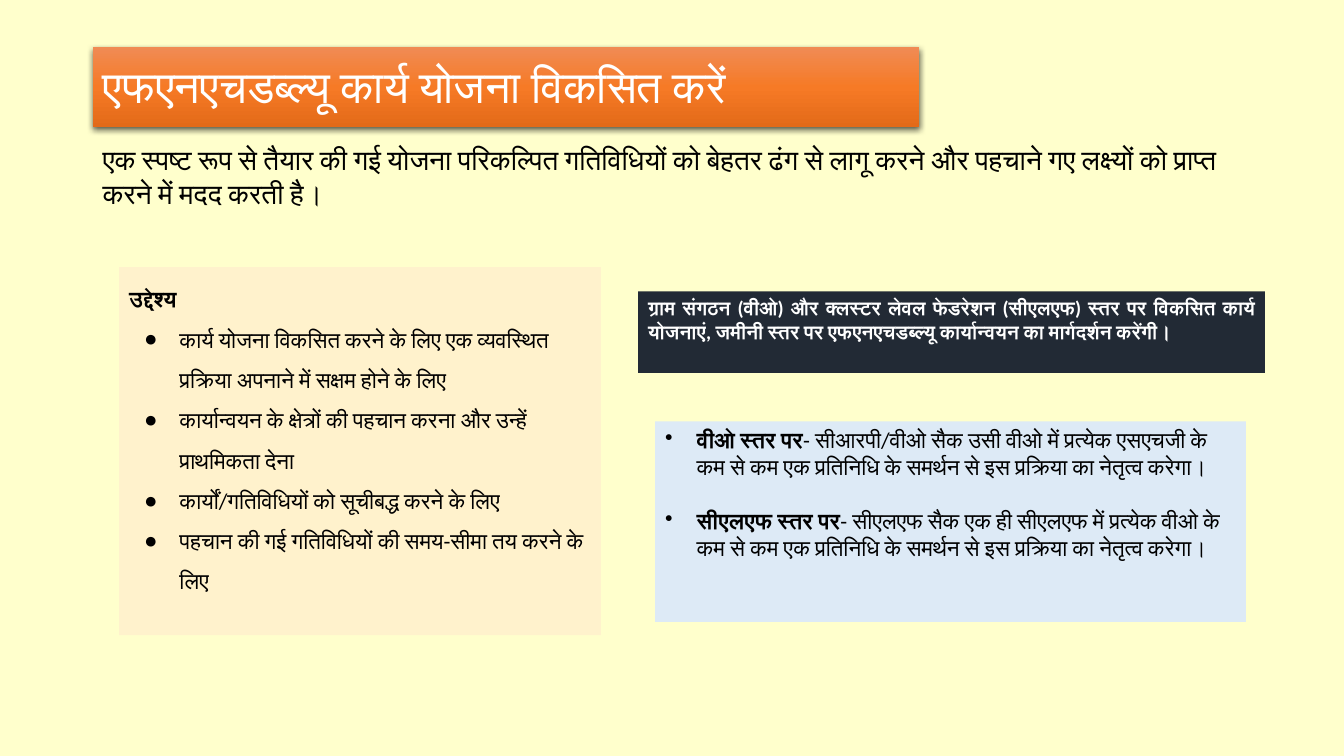
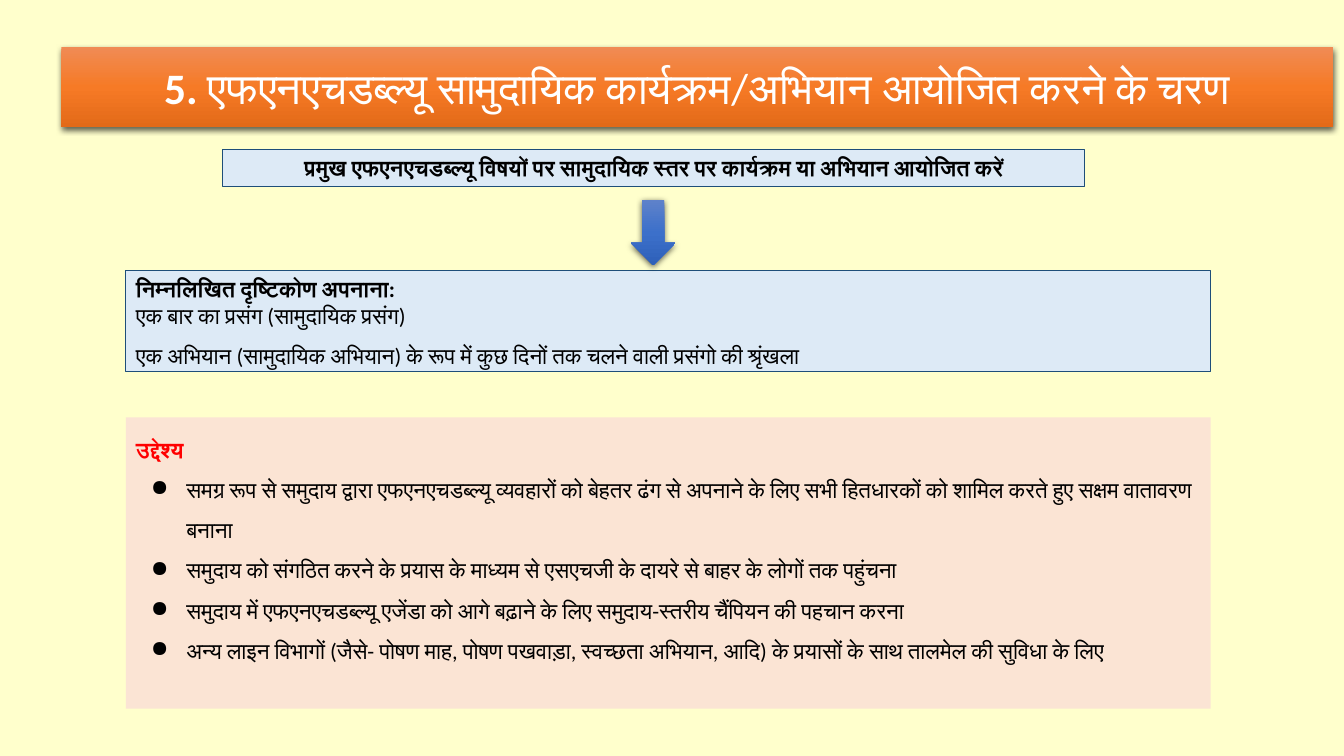
"""Build two slides on planning and running community health events."""
from copy import deepcopy

from lxml import etree
from pptx import Presentation
from pptx.dml.color import RGBColor
from pptx.enum.shapes import MSO_SHAPE
from pptx.enum.text import MSO_ANCHOR, MSO_AUTO_SIZE, PP_ALIGN
from pptx.oxml.ns import qn
from pptx.util import Pt

RECT, DOWN_ARROW = MSO_SHAPE.RECTANGLE, MSO_SHAPE.DOWN_ARROW
TOP, MIDDLE = MSO_ANCHOR.TOP, MSO_ANCHOR.MIDDLE
LEFT, CENTER, JUSTIFY = PP_ALIGN.LEFT, PP_ALIGN.CENTER, PP_ALIGN.JUSTIFY
FIXED = MSO_AUTO_SIZE.NONE
TITLE_CONTENT, TITLE_ONLY = 1, 5

FONT = "Calibri"
COLORS = {
    "page": "FFFFCC", "black": "000000", "white": "FFFFFF", "red": "FF0000",
    "cream": "FFF2CC", "sky": "DDEAF6", "navy": "222A35", "peach": "FBE4D4",
    "border": "1E4E79",
}
GRADIENTS = {
    "orange": ("F08B54", "F67A26", "E36A18"),
    "blue": ("5F82CA", "3C70CA", "2E60B9"),
}
INDENTS = {"●": (36, -25.2), "•": (22.5, -22.5)}


def rgb(name):
    """Return a named colour."""
    return RGBColor.from_string(COLORS[name])


class Deck:
    """Hold the shared style and the current slide."""

    def __init__(self):
        """Start a wide presentation with a plain page colour."""
        self.prs = Presentation()
        self.prs.slide_width, self.prs.slide_height = Pt(960), Pt(540)
        fill = self.prs.slide_master.background.fill
        fill.solid()
        fill.fore_color.rgb = rgb("page")

    def slide(self, layout):
        """Add a slide and make it current."""
        self.s = self.prs.slides.add_slide(self.prs.slide_layouts[layout])

    def place(self, sp, box):
        """Move a shape to left, top, width, height."""
        sp.left, sp.top, sp.width, sp.height = (Pt(v) for v in box)

    def glossy(self, kind, box, gradient):
        """Add a shape with a vertical gradient and a soft shadow."""
        sp = self.s.shapes.add_shape(kind, *(Pt(v) for v in box))
        sp.line.fill.background()
        sp.fill.gradient()
        sp.fill.gradient_angle = 270
        stops = sp.element.spPr.find(".//" + qn("a:gsLst"))
        stops.append(deepcopy(stops[-1]))
        for i, (stop, color) in enumerate(zip(sp.fill.gradient_stops, GRADIENTS[gradient])):
            stop.position = i / 2
            stop.color.rgb = RGBColor.from_string(color)
        sp.shadow.inherit = False
        shadow = etree.SubElement(
            sp.element.spPr.find(qn("a:effectLst")), qn("a:outerShdw"),
            blurRad=str(Pt(4.5)), dist=str(Pt(1.5)), dir="5400000", rotWithShape="0")
        color = etree.SubElement(shadow, qn("a:srgbClr"), val=COLORS["black"])
        etree.SubElement(color, qn("a:alpha"), val="63000")
        return sp

    def title(self, band_box, box, paragraph, size, align=LEFT):
        """Fill the title placeholder and lay its band behind it."""
        sp = self.s.shapes.title
        band = self.glossy(RECT, band_box, "orange")
        sp.element.addprevious(band.element)
        self.place(sp, box)
        self.set_text(sp, [dict(paragraph, spacing=0.9, color="white")], size, align, MIDDLE)

    def body(self, box, fill, paragraphs):
        """Fill the body placeholder as a coloured panel."""
        sp = self.s.placeholders[1]
        self.place(sp, box)
        sp.fill.solid()
        sp.fill.fore_color.rgb = rgb(fill)
        self.set_text(sp, paragraphs)

    def panel(self, box, fill, paragraphs, size=16, align=LEFT, border=None):
        """Add a coloured rectangle with text."""
        sp = self.s.shapes.add_shape(RECT, *(Pt(v) for v in box))
        sp.shadow.inherit = False
        sp.fill.solid()
        sp.fill.fore_color.rgb = rgb(fill)
        if border:
            sp.line.color.rgb = rgb(border)
            sp.line.width = Pt(0.75)
        else:
            sp.line.fill.background()
        self.set_text(sp, paragraphs, size, align)

    def text(self, box, paragraphs, size):
        """Add a plain text box."""
        sp = self.s.shapes.add_textbox(*(Pt(v) for v in box))
        self.set_text(sp, paragraphs, size)

    def set_text(self, sp, paragraphs, size=16, align=LEFT, anchor=TOP):
        """Put formatted paragraphs into a shape."""
        tf = sp.text_frame
        tf.word_wrap, tf.auto_size, tf.vertical_anchor = True, FIXED, anchor
        tf.margin_left = tf.margin_right = Pt(7.2)
        tf.margin_top = tf.margin_bottom = Pt(3.6)
        for i, item in enumerate(paragraphs):
            p = tf.paragraphs[0] if i == 0 else tf.add_paragraph()
            self.bullet(p, item.get("bullet"))
            p.alignment = align
            p.line_spacing = item.get("spacing", 1.0)
            p.space_before = Pt(item.get("before", 0))
            for key in ("bold", "plain"):
                if key in item:
                    r = p.add_run()
                    r.text = item[key]
                    r.font.name, r.font.size = FONT, Pt(size)
                    r.font.bold = key == "bold"
                    r.font.color.rgb = rgb(item.get("color", "black"))
                    etree.SubElement(r._r.get_or_add_rPr(), qn("a:cs"), typeface=FONT)

    def bullet(self, p, char):
        """Set the bullet and hanging indent of a paragraph."""
        pPr = p._p.get_or_add_pPr()
        margin, indent = INDENTS.get(char, (0, 0))
        pPr.set("marL", str(Pt(margin)))
        pPr.set("indent", str(Pt(indent)))
        if char:
            color = etree.SubElement(pPr, qn("a:buClr"))
            etree.SubElement(color, qn("a:srgbClr"), val=COLORS["black"])
            etree.SubElement(pPr, qn("a:buChar"), char=char)
        else:
            etree.SubElement(pPr, qn("a:buNone"))


def objectives(items, color="black"):
    """Return the objectives heading and its bulleted list."""
    heading = dict(bold="उद्देश्य", color=color, spacing=1.5)
    return [heading] + [dict(plain=item, bullet="●", spacing=1.5) for item in items]


def plan_slide(deck):
    """Build the action plan slide."""
    deck.slide(TITLE_CONTENT)
    deck.title((66.2, 33.8, 590.4, 56.9), (66.2, 35.3, 590.4, 56.9),
               dict(plain="एफएनएचडब्ल्यू कार्य योजना विकसित करें"), 32)
    deck.body((85, 190.8, 344.2, 262.8), "cream", objectives([
        "कार्य योजना विकसित करने के लिए एक व्यवस्थित प्रक्रिया अपनाने में सक्षम होने के लिए",
        "कार्यान्वयन के क्षेत्रों की पहचान करना और उन्हें प्राथमिकता देना",
        "कार्यों/गतिविधियों को सूचीबद्ध करने के लिए",
        "पहचान की गई गतिविधियों की समय-सीमा तय करने के लिए",
    ]))
    deck.text((66.2, 98.6, 830.9, 55.4), [dict(
        plain="एक स्पष्ट रूप से तैयार की गई योजना परिकल्पित गतिविधियों को बेहतर ढंग से "
              "लागू करने और पहचाने गए लक्ष्यों को प्राप्त करने में मदद करती है।")], 20)
    deck.panel((468, 301, 422, 143.3), "sky", [
        dict(bold="वीओ स्तर पर", bullet="•",
             plain="- सीआरपी/वीओ सैक उसी वीओ में प्रत्येक एसएचजी के कम से कम एक "
                   "प्रतिनिधि के समर्थन से इस प्रक्रिया का नेतृत्व करेगा।"),
        dict(bold="सीएलएफ स्तर पर", bullet="•", before=19.5,
             plain="- सीएलएफ सैक एक ही सीएलएफ में प्रत्येक वीओ के कम से कम एक "
                   "प्रतिनिधि के समर्थन से इस प्रक्रिया का नेतृत्व करेगा।"),
    ])
    deck.panel((455.8, 208.1, 447.8, 58.3), "navy", [dict(
        color="white",
        bold="ग्राम संगठन (वीओ) और क्लस्टर लेवल फेडरेशन (सीएलएफ) स्तर पर विकसित कार्य "
             "योजनाएं, जमीनी स्तर पर एफएनएचडब्ल्यू कार्यान्वयन का मार्गदर्शन करेंगी।",
    )], 14, JUSTIFY)


def campaign_slide(deck):
    """Build the community campaign slide."""
    deck.slide(TITLE_ONLY)
    deck.title((43.9, 33.8, 908.6, 56.9), (39.6, 28.8, 916.6, 71.3), dict(
        bold="5. ", plain="एफएनएचडब्ल्यू सामुदायिक कार्यक्रम/अभियान आयोजित करने के चरण",
    ), 31, CENTER)
    deck.panel((159.1, 106.6, 615.6, 26.6), "sky", [dict(
        bold="प्रमुख एफएनएचडब्ल्यू विषयों पर सामुदायिक स्तर पर कार्यक्रम या अभियान आयोजित करें",
    )], align=CENTER, border="border")
    deck.panel((90, 298.1, 774.7, 208.1), "peach", objectives([
        "समग्र रूप से समुदाय द्वारा एफएनएचडब्ल्यू व्यवहारों को बेहतर ढंग से अपनाने के लिए "
        "सभी हितधारकों को शामिल करते हुए सक्षम वातावरण बनाना",
        "समुदाय को संगठित करने के प्रयास के माध्यम से एसएचजी के दायरे से बाहर के लोगों तक पहुंचना",
        "समुदाय में एफएनएचडब्ल्यू एजेंडा को आगे बढ़ाने के लिए समुदाय-स्तरीय चैंपियन की पहचान करना",
        "अन्य लाइन विभागों (जैसे- पोषण माह, पोषण पखवाड़ा, स्वच्छता अभियान, आदि) के प्रयासों के "
        "साथ तालमेल की सुविधा के लिए",
    ], "red"))
    deck.panel((90, 193, 774.7, 72.7), "sky", [
        dict(bold="निम्नलिखित दृष्टिकोण अपनाना:"),
        dict(plain="एक बार का प्रसंग (सामुदायिक प्रसंग)"),
        dict(plain="एक अभियान (सामुदायिक अभियान) के रूप में कुछ दिनों तक चलने वाली "
                   "प्रसंगो की श्रृंखला", spacing=1.5),
    ], border="border")
    deck.glossy(DOWN_ARROW, (450.7, 142.6, 31.7, 46.8), "blue")


def main():
    """Build and save the presentation."""
    deck = Deck()
    plan_slide(deck)
    campaign_slide(deck)
    deck.prs.save("out.pptx")


if __name__ == "__main__":
    main()
